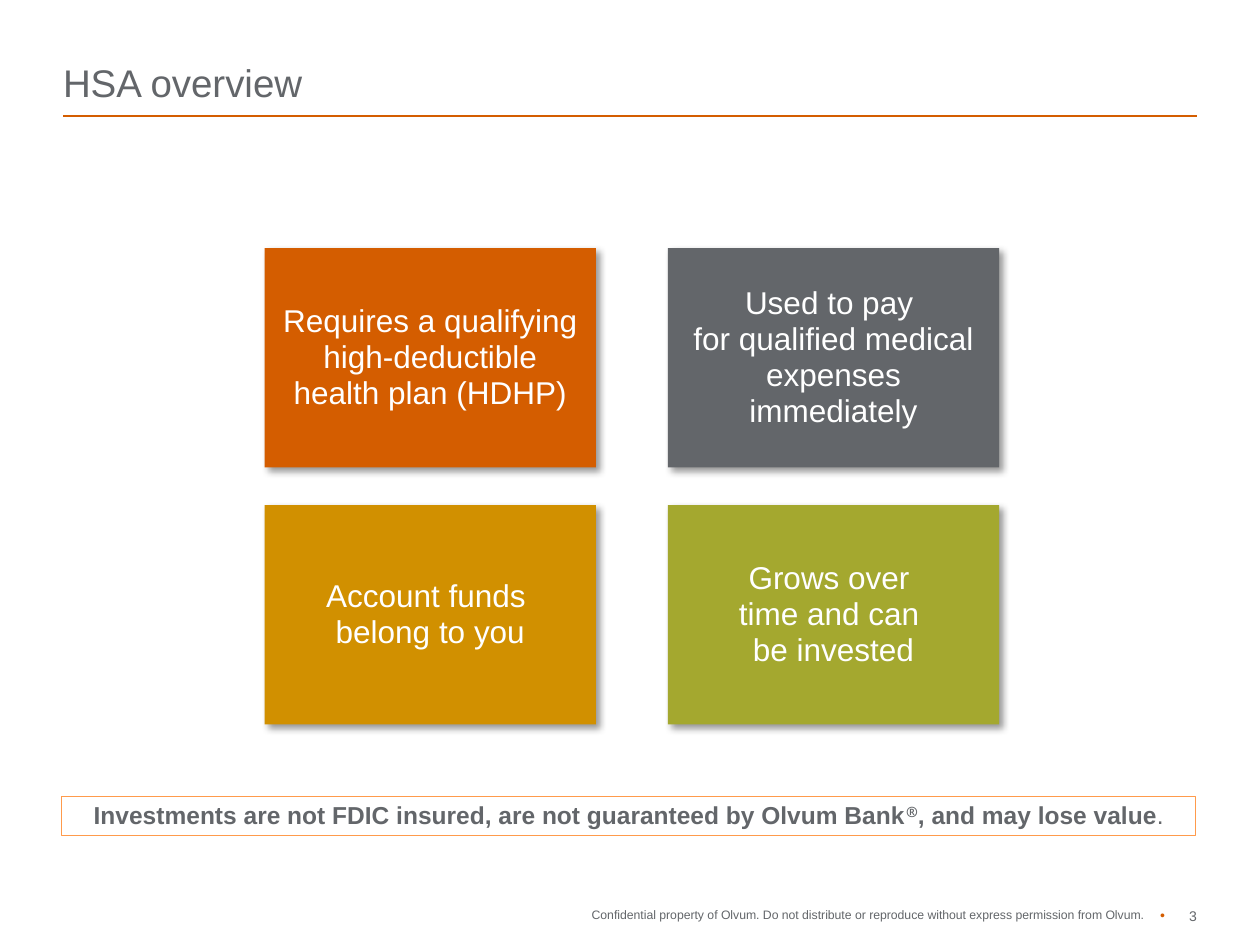
"""Build the HSA overview slide: a two-by-two grid of facts above a boxed notice."""
from dataclasses import dataclass

from lxml.etree import SubElement
from pptx import Presentation
from pptx.dml.color import RGBColor
from pptx.enum.shapes import MSO_CONNECTOR as Connector, MSO_SHAPE as Shape
from pptx.enum.text import MSO_ANCHOR as Anchor, PP_ALIGN as Align
from pptx.oxml.ns import qn
from pptx.util import Inches, Pt


@dataclass(frozen=True)
class Theme:
    font: str = "Arial"
    symbol_font: str = "Noto Sans"
    orange: str = "D45D00"
    gray: str = "63666A"
    gold: str = "D19000"
    green: str = "A4A82F"
    light_orange: str = "FF9B4C"
    white: str = "FFFFFF"
    title: int = 22
    card: int = 18
    notice: int = 14
    number: int = 8
    footer: int = 7


THEME = Theme()
TITLE = "HSA overview"
CARDS = [
    [("Requires a qualifying\vhigh-deductible health plan (HDHP)", THEME.orange),
     ("Used to pay \vfor qualified medical expenses immediately", THEME.gray)],
    [("Account funds \vbelong to you", THEME.gold),
     ("Grows over \vtime and can \vbe invested", THEME.green)],
]
NOTICE = [
    ("Investments are not FDIC insured, are not guaranteed by Olvum Bank", "bold"),
    ("®", "superscript"),
    (", and may lose value", "bold"),
    (".", "plain"),
]
FOOTER = ("Confidential property of Olvum. Do not distribute or reproduce "
          "without express permission from Olvum.")
PAGE_NUMBER = "3"

WIDTH, HEIGHT, MARGIN = 10, 7.5, 0.5
CONTENT_WIDTH = WIDTH - 2 * MARGIN
RULE_TOP = 0.92
GRID_LEFT, GRID_TOP = 2.1, 1.97
CARD_WIDTH, CARD_HEIGHT = 2.63, 1.74
COLUMN_GAP, ROW_GAP = 0.57, 0.3
FOOTER_TOP = 7.2


def color(value):
    return RGBColor.from_string(value)


def box(*lengths):
    return [Inches(length) for length in lengths]


def style(font, size, value, name=THEME.font):
    font.name, font.size = name, Pt(size)
    font.color.rgb = color(value)


def set_frame(frame, anchor, side=0, wrap=True):
    frame.margin_left = frame.margin_right = Inches(side)
    frame.margin_top = frame.margin_bottom = 0
    frame.vertical_anchor, frame.word_wrap = anchor, wrap


def style_runs(paragraph, size, value):
    for run in paragraph.runs:
        style(run.font, size, value)


def add_title(slide):
    title = slide.shapes.title
    title.left, title.top, title.width, title.height = box(MARGIN, 0.17, CONTENT_WIDTH, 0.67)
    title.text_frame.text = TITLE
    set_frame(title.text_frame, Anchor.BOTTOM)
    paragraph = title.text_frame.paragraphs[0]
    paragraph.alignment, paragraph.line_spacing = Align.LEFT, 0.9
    style_runs(paragraph, THEME.title, THEME.gray)
    ends = box(MARGIN, RULE_TOP, WIDTH - MARGIN, RULE_TOP)
    rule = slide.shapes.add_connector(Connector.STRAIGHT, *ends)
    rule.line.color.rgb, rule.line.width = color(THEME.orange), Pt(1)
    SubElement(rule._element.spPr, qn("a:effectLst"))


def add_shadow(shape):
    effects = shape._element.spPr.find(qn("a:effectLst"))
    shadow = SubElement(effects, qn("a:outerShdw"), blurRad=str(Pt(4)), dist=str(Pt(3)),
                        dir=str(45 * 60000), algn="tl", rotWithShape="0")
    black = SubElement(shadow, qn("a:srgbClr"), val="000000")
    SubElement(black, qn("a:alpha"), val="40000")


def add_card(slide, row, column, text, fill):
    left = GRID_LEFT + column * (CARD_WIDTH + COLUMN_GAP)
    top = GRID_TOP + row * (CARD_HEIGHT + ROW_GAP)
    card = slide.shapes.add_shape(Shape.RECTANGLE, *box(left, top, CARD_WIDTH, CARD_HEIGHT))
    card.shadow.inherit = False
    card.fill.solid()
    card.fill.fore_color.rgb = color(fill)
    card.line.fill.background()
    add_shadow(card)
    card.text_frame.text = text
    set_frame(card.text_frame, Anchor.MIDDLE, side=0.1)
    paragraph = card.text_frame.paragraphs[0]
    paragraph.alignment, paragraph.line_spacing = Align.CENTER, 0.95
    style_runs(paragraph, THEME.card, THEME.white)


def add_notice(slide):
    notice = slide.shapes.add_shape(Shape.RECTANGLE, *box(0.49, 6.32, CONTENT_WIDTH, 0.31))
    notice.shadow.inherit = False
    notice.fill.background()
    notice.line.color.rgb, notice.line.width = color(THEME.light_orange), Pt(0.75)
    notice.text_frame.vertical_anchor = Anchor.TOP
    paragraph = notice.text_frame.paragraphs[0]
    paragraph.alignment, paragraph.line_spacing = Align.CENTER, 0.95
    for text, kind in NOTICE:
        run = paragraph.add_run()
        run.text = text
        raised = kind == "superscript"
        style(run.font, THEME.notice, THEME.gray, THEME.symbol_font if raised else THEME.font)
        run.font.bold = kind != "plain"
        if raised:
            run.font._element.set("baseline", "30000")


def add_footer_text(slide, text, left, width, height, size, wrap):
    footer = slide.shapes.add_textbox(*box(left, FOOTER_TOP, width, height))
    footer.text_frame.text = text
    set_frame(footer.text_frame, Anchor.TOP, wrap=wrap)
    paragraph = footer.text_frame.paragraphs[0]
    paragraph.alignment = Align.RIGHT
    style_runs(paragraph, size, THEME.gray)
    return paragraph


def add_bullet(paragraph, indent):
    properties = paragraph._p.get_or_add_pPr()
    properties.set("marL", str(Inches(indent)))
    properties.set("indent", str(-Inches(indent)))
    bullet_color = SubElement(properties, qn("a:buClr"))
    SubElement(bullet_color, qn("a:srgbClr"), val=THEME.orange)
    SubElement(properties, qn("a:buFont"), typeface=THEME.font)
    SubElement(properties, qn("a:buChar"), char="•")


def main():
    presentation = Presentation()
    presentation.slide_width, presentation.slide_height = box(WIDTH, HEIGHT)
    slide = presentation.slides.add_slide(presentation.slide_layouts[5])
    add_title(slide)
    for row, cards in enumerate(CARDS):
        for column, (text, fill) in enumerate(cards):
            add_card(slide, row, column, text, fill)
    add_notice(slide)
    add_footer_text(slide, FOOTER, 4.59, 4.49, 0.12, THEME.footer, wrap=False)
    number = add_footer_text(slide, PAGE_NUMBER, 9.17, 0.33, 0.17, THEME.number, wrap=True)
    add_bullet(number, 0.23)
    presentation.save("out.pptx")


if __name__ == "__main__":
    main()
